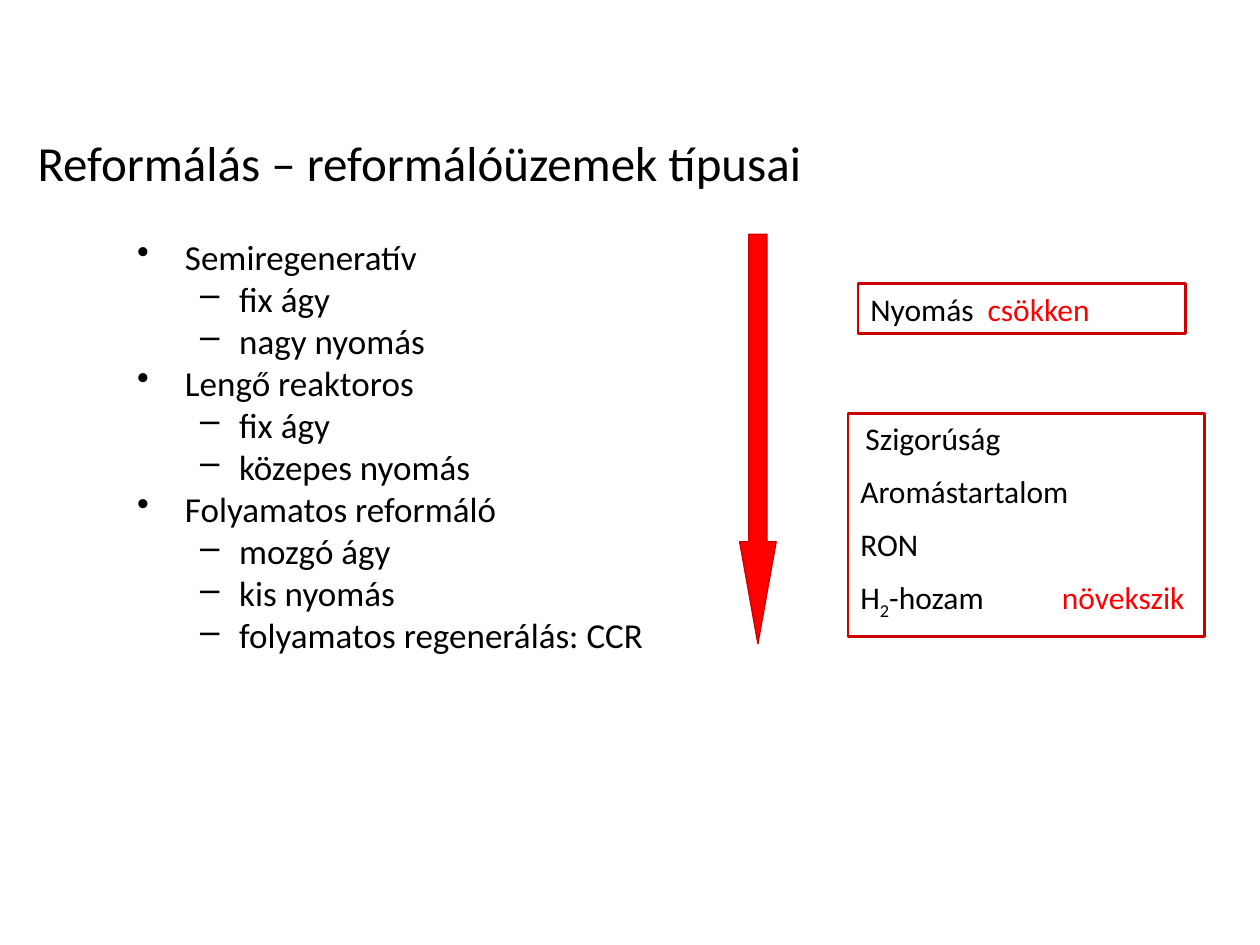
"""Build a slide on the types of catalytic reforming units."""
from pptx import Presentation
from pptx.dml.color import RGBColor
from pptx.enum.shapes import MSO_SHAPE
from pptx.enum.text import MSO_ANCHOR, PP_ALIGN
from pptx.oxml.xmlchemy import OxmlElement
from pptx.util import Inches, Pt

THEME = {
    "font": "Calibri",
    "ink": RGBColor(0, 0, 0),
    "accent": RGBColor(0xFF, 0, 0),
    "border": RGBColor(0xCC, 0, 0),
    "title": Pt(28),
    "list": Pt(20),
    "label": Pt(18),
    "gap": Pt(8.6),
}

deck = Presentation()
deck.slide_width, deck.slide_height = Inches(10), Inches(7.5)
page = deck.slides.add_slide(deck.slide_layouts[6])
column, row = deck.slide_width / 100, deck.slide_height / 75


def grid(left, top, width, height):
    return [round(n * unit) for n, unit in zip((left, top, width, height), (column, row) * 2)]


def write(para, text, size, color="ink", baseline=None):
    span = para.add_run()
    span.text = text
    formats = {"name": THEME["font"], "size": THEME[size]}
    for key, value in formats.items():
        setattr(span.font, key, value)
    span.font.color.rgb = THEME[color]
    if baseline:
        span.font._element.set("baseline", baseline)


title = page.shapes.add_textbox(*grid(2, 8.6, 83.3, 5.8)).text_frame
title.word_wrap = True
title.paragraphs[0].line_spacing = 1.3
write(title.paragraphs[0], "Reformálás – reformálóüzemek típusai", "title")

UNITS = {
    "Semiregeneratív": ["fix ágy", "nagy nyomás"],
    "Lengő reaktoros": ["fix ágy", "közepes nyomás"],
    "Folyamatos reformáló": ["mozgó ágy", "kis nyomás", "folyamatos regenerálás: CCR"],
}
LEVELS = [("•", 3.8, 3.8), ("–", 8.1, 3.1)]
items = [
    (level, text)
    for unit, traits in UNITS.items()
    for level, text in [(0, unit)] + [(1, trait) for trait in traits]
]
listing = page.shapes.add_textbox(*grid(9.9, 18.2, 59.6, 43.2)).text_frame
listing.word_wrap = True
for index, (level, text) in enumerate(items):
    para = listing.add_paragraph() if index else listing.paragraphs[0]
    para.level = level
    mark, margin, hang = LEVELS[level]
    properties = para._p.get_or_add_pPr()
    properties.set("marL", str(round(margin * column)))
    properties.set("indent", str(round(-hang * column)))
    bullet = OxmlElement("a:buChar")
    bullet.set("char", mark)
    properties.append(bullet)
    write(para, text, "list")

arrow = page.shapes.add_shape(MSO_SHAPE.DOWN_ARROW, *grid(58.7, 18.6, 2.9, 32.5))
arrow.adjustments[0], arrow.adjustments[1] = 0.5, 2.79
arrow.shadow.inherit = False
arrow.fill.solid()
arrow.fill.fore_color.rgb = THEME["accent"]
arrow.line.color.rgb = THEME["border"]
arrow.line.width = Pt(0.75)

EFFECTS = [
    (grid(68.1, 22.5, 26, 4), 9.3, 0, [[("Nyomás\t",), ("csökken", "accent")]]),
    (
        grid(67.3, 32.8, 28.3, 17.7),
        16,
        0.4,
        [
            [("Szigorúság",)],
            [("Aromástartalom",)],
            [("RON",)],
            [("H",), ("2", "ink", "-25000"), ("-hozam\t",), ("növekszik", "accent")],
        ],
    ),
]
for place, stop, first_margin, lines in EFFECTS:
    box = page.shapes.add_shape(MSO_SHAPE.RECTANGLE, *place)
    box.shadow.inherit = False
    box.fill.background()
    box.line.color.rgb = THEME["border"]
    box.line.width = Pt(1.5)
    frame = box.text_frame
    for key, value in {"word_wrap": True, "vertical_anchor": MSO_ANCHOR.TOP}.items():
        setattr(frame, key, value)
    for index, spans in enumerate(lines):
        para = frame.add_paragraph() if index else frame.paragraphs[0]
        formats = {"alignment": PP_ALIGN.LEFT, "space_before": THEME["gap"] if index else Pt(0)}
        for key, value in formats.items():
            setattr(para, key, value)
        properties = para._p.get_or_add_pPr()
        properties.set("marL", str(0 if index else round(first_margin * column)))
        tabs, tab = OxmlElement("a:tabLst"), OxmlElement("a:tab")
        tab.set("pos", str(round(stop * column)))
        tab.set("algn", "l")
        tabs.append(tab)
        properties.append(tabs)
        for text, *style in spans:
            write(para, text, "label", *style)

deck.save("out.pptx")
